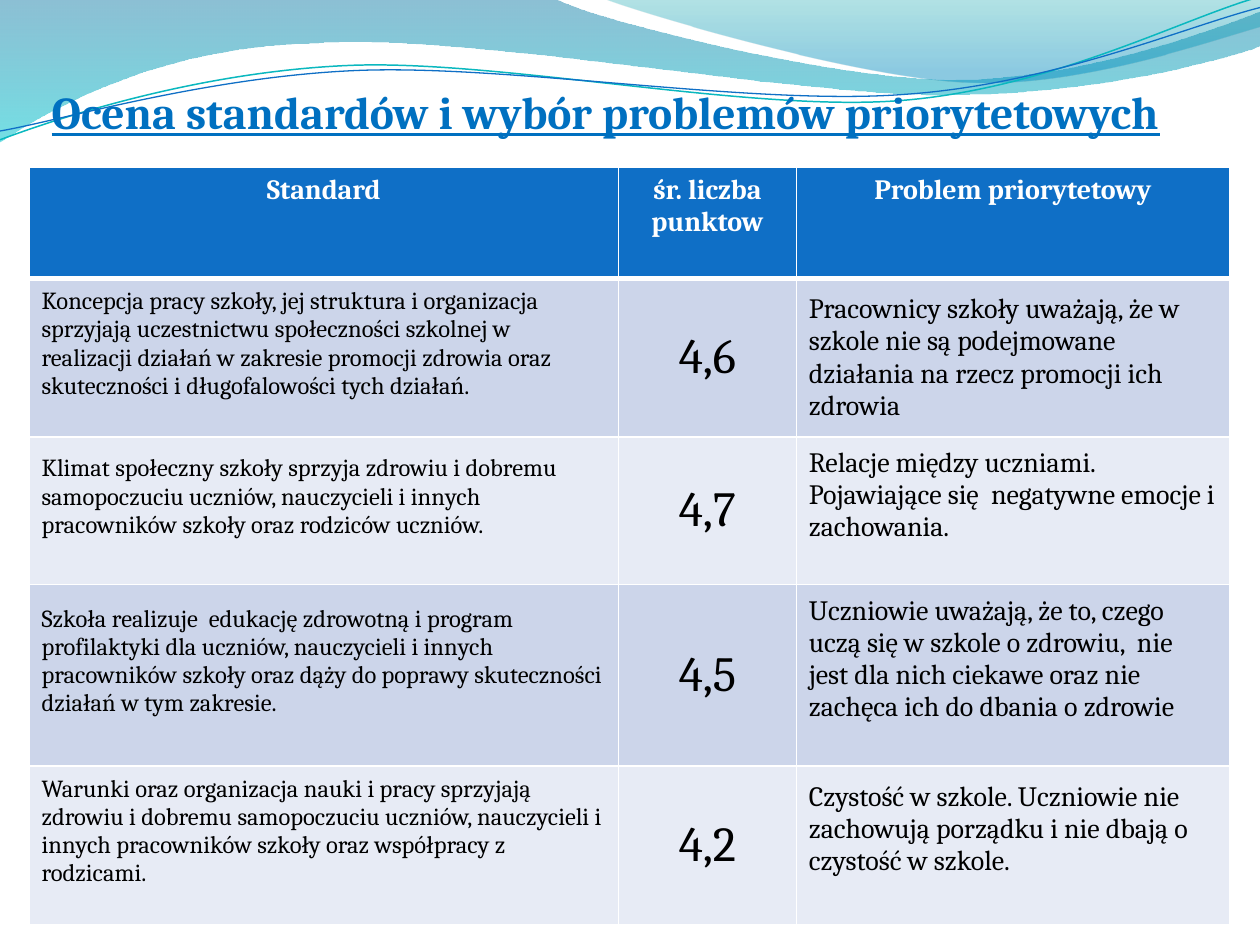
from dataclasses import dataclass

from lxml.etree import SubElement
from pptx import Presentation
from pptx.dml.color import RGBColor
from pptx.enum.text import MSO_ANCHOR, MSO_AUTO_SIZE, PP_ALIGN
from pptx.oxml import parse_xml
from pptx.oxml.ns import nsdecls, qn
from pptx.util import Inches, Pt


@dataclass(frozen=True)
class Theme:
    font: str = "Cambria"
    title: str = "0070C0"
    header: str = "0F6FC6"
    bands: tuple = ("CCD5EA", "E7EBF5")
    white: str = "FFFFFF"
    black: str = "000000"
    teal: str = "0AB8BF"
    title_size: int = 26
    header_size: int = 16
    standard_size: int = 14
    score_size: int = 28
    problem_size: int = 16


THEME = Theme()

# Each wave: start point, then segments of one point (line) or three (curve).
LEFT_WAVE = ((0, 0), [
    [(4.4, -0.01)],
    [(4.76, 0.17), (6.64, 0.63), (7.58, 0.63)],
    [(8.53, 0.63), (9.58, 0.26), (10, 0.09)],
    [(10.01, 0.36)],
    [(9.83, 0.44), (8.7, 0.76), (7.46, 0.75)],
    [(6.22, 0.75), (3.82, 0.28), (2.57, 0.34)],
    [(1.29, 0.36), (0.46, 0.83), (-0.01, 1.13)],
])
RIGHT_WAVE = ((4.79, -0.01), [
    [(5.09, 0.11), (6.82, 0.62), (7.69, 0.65)],
    [(8.56, 0.69), (9.61, 0.32), (10, 0.21)],
    [(10, 0)],
])
TEAL_LINE = ((0, 1.11), [
    [(0.48, 0.93), (1.58, 0.57), (2.77, 0.52)],
    [(3.95, 0.47), (5.93, 0.89), (7.13, 0.8)],
    [(8.33, 0.71), (9.38, 0.15), (9.98, -0.02)],
])
BLUE_LINE = ((0, 1.04), [
    [(0.47, 0.96), (1.64, 0.61), (2.83, 0.56)],
    [(4.03, 0.51), (5.97, 0.84), (7.17, 0.75)],
    [(8.36, 0.67), (9.41, 0.21), (10, 0.06)],
])
# Gradient stops: position %, colour, opacity %
LEFT_STOPS = [(0, "0074A1", 45), (100, "00C6CF", 55)]
RIGHT_STOPS = [(0, "00A1A9", 30), (80, "008BBF", 45)]

HEADERS = ("Standard", "śr. liczba punktow", "Problem priorytetowy")
COLUMN_WIDTHS = (4.68, 1.41, 3.44)
ROW_HEIGHTS = (0.88, 1.26, 1.17, 1.44, 1.26)
MARGIN = 0.05
STANDARD_GAP = 0.27
PROBLEM_GAP = 0.3
# Standard, score, problem, bottom margin of the problem cell
ROWS = [
    ("Koncepcja pracy szkoły, jej struktura i organizacja sprzyjają uczestnictwu "
     "społeczności szkolnej w realizacji działań w zakresie promocji zdrowia oraz "
     "skuteczności i długofalowości tych działań.",
     "4,6",
     "Pracownicy szkoły uważają, że w szkole nie są podejmowane działania na rzecz "
     "promocji ich zdrowia", MARGIN),
    ("Klimat społeczny szkoły sprzyja zdrowiu i dobremu samopoczuciu uczniów, "
     "nauczycieli i innych pracowników szkoły oraz rodziców uczniów.",
     "4,7",
     "Relacje między uczniami. Pojawiające się  negatywne emocje i zachowania.",
     PROBLEM_GAP),
    ("Szkoła realizuje  edukację zdrowotną i program profilaktyki dla uczniów, "
     "nauczycieli i innych pracowników szkoły oraz dąży do poprawy skuteczności "
     "działań w tym zakresie.",
     "4,5",
     "Uczniowie uważają, że to, czego uczą się w szkole o zdrowiu,  nie jest dla "
     "nich ciekawe oraz nie zachęca ich do dbania o zdrowie", PROBLEM_GAP),
    ("Warunki oraz organizacja nauki i pracy sprzyjają zdrowiu i dobremu "
     "samopoczuciu uczniów, nauczycieli i innych pracowników szkoły oraz "
     "współpracy z rodzicami.",
     "4,2",
     "Czystość w szkole. Uczniowie nie zachowują porządku i nie dbają o czystość "
     "w szkole.", PROBLEM_GAP),
]


def rgb(value):
    return RGBColor.from_string(value)


def add_run(paragraph, text, size, color, bold=False, underline=False):
    run = paragraph.add_run()
    run.text = text
    font = run.font
    font.name, font.size = THEME.font, Pt(size)
    font.bold, font.underline = bold, underline
    font.color.rgb = rgb(color)


def add_wave(slide, wave, close):
    """Draw the wave's points as a polygon, then turn its triples into Bézier curves."""
    start, segments = wave
    points = [(Inches(x), Inches(y)) for segment in segments for x, y in segment]
    builder = slide.shapes.build_freeform(Inches(start[0]), Inches(start[1]))
    builder.add_line_segments(points, close=close)
    shape = builder.convert_to_shape()
    shape.shadow.inherit = False
    steps = iter(list(shape.element.iter(qn("a:lnTo"))))
    for segment in segments:
        lines = [next(steps) for _ in segment]
        if len(lines) == 3:
            curve = lines[0].makeelement(qn("a:cubicBezTo"))
            lines[0].addprevious(curve)
            for line in lines:
                curve.append(line[0])
                line.getparent().remove(line)
    return shape


def add_filled_wave(slide, wave, stops):
    shape = add_wave(slide, wave, close=True)
    shape.line.fill.background()
    stop_xml = "".join(
        f'<a:gs pos="{position * 1000}"><a:srgbClr val="{color}">'
        f'<a:alpha val="{opacity * 1000}"/></a:srgbClr></a:gs>'
        for position, color, opacity in stops)
    gradient = parse_xml(
        f'<a:gradFill {nsdecls("a")} rotWithShape="1"><a:gsLst>{stop_xml}</a:gsLst>'
        '<a:lin ang="5400000" scaled="1"/></a:gradFill>')
    shape.element.spPr.find(qn("a:custGeom")).addnext(gradient)


def add_line_wave(slide, wave, color, width):
    shape = add_wave(slide, wave, close=False)
    shape.fill.background()
    shape.line.color.rgb = rgb(color)
    shape.line.width = Pt(width)


def format_title(slide):
    title = slide.shapes.title
    title.element.getparent().append(title.element)  # in front of the waves
    title.left, title.top = Inches(0.31), Inches(0.62)
    title.width, title.height = Inches(9.69), Inches(0.54)
    frame = title.text_frame
    frame.word_wrap = True
    frame.auto_size = MSO_AUTO_SIZE.SHAPE_TO_FIT_TEXT
    frame.vertical_anchor = MSO_ANCHOR.TOP
    paragraph = frame.paragraphs[0]
    paragraph.alignment = PP_ALIGN.LEFT
    add_run(paragraph, "Ocena standardów i wybór problemów priorytetowych",
            THEME.title_size, THEME.title, bold=True, underline=True)


def set_borders(cell, top, bottom):
    properties = cell._tc.get_or_add_tcPr()
    for side, width in (("L", 1), ("R", 1), ("T", top), ("B", bottom)):
        line = SubElement(properties, qn(f"a:ln{side}"), w=str(Pt(width)))
        fill = SubElement(line, qn("a:solidFill"))
        SubElement(fill, qn("a:srgbClr"), val=THEME.white)


def fill_cell(cell, text, size, fill, centred, bottom_margin=MARGIN, header=False):
    cell.fill.solid()
    cell.fill.fore_color.rgb = rgb(fill)
    cell.margin_bottom = Inches(bottom_margin)
    cell.vertical_anchor = MSO_ANCHOR.TOP if header else MSO_ANCHOR.MIDDLE
    paragraph = cell.text_frame.paragraphs[0]
    paragraph.alignment = PP_ALIGN.CENTER if centred else PP_ALIGN.LEFT
    add_run(paragraph, text, size, THEME.white if header else THEME.black, bold=header)


def add_standards_table(slide):
    table = slide.shapes.add_table(
        len(ROW_HEIGHTS), len(COLUMN_WIDTHS), Inches(0.23), Inches(1.33),
        Inches(sum(COLUMN_WIDTHS)), Inches(sum(ROW_HEIGHTS))).table
    for column, width in zip(table.columns, COLUMN_WIDTHS):
        column.width = Inches(width)
    for index, (row, height) in enumerate(zip(table.rows, ROW_HEIGHTS)):
        row.height = Inches(height)
        for cell in row.cells:
            set_borders(cell, top=3 if index == 1 else 1, bottom=3 if index == 0 else 1)
    for cell, text in zip(table.rows[0].cells, HEADERS):
        fill_cell(cell, text, THEME.header_size, THEME.header, True, header=True)
    for index, (standard, score, problem, gap) in enumerate(ROWS):
        cells = list(table.rows[index + 1].cells)
        band = THEME.bands[index % 2]
        fill_cell(cells[0], standard, THEME.standard_size, band, False, STANDARD_GAP)
        fill_cell(cells[1], score, THEME.score_size, band, True)
        fill_cell(cells[2], problem, THEME.problem_size, band, False, gap)


def main():
    presentation = Presentation()
    presentation.slide_width, presentation.slide_height = Inches(10), Inches(7.5)
    slide = presentation.slides.add_slide(presentation.slide_layouts[5])
    add_filled_wave(slide, LEFT_WAVE, LEFT_STOPS)
    add_filled_wave(slide, RIGHT_WAVE, RIGHT_STOPS)
    add_line_wave(slide, TEAL_LINE, THEME.teal, 0.85)
    add_line_wave(slide, BLUE_LINE, THEME.header, 0.75)
    format_title(slide)
    add_standards_table(slide)
    presentation.save("out.pptx")


if __name__ == "__main__":
    main()
